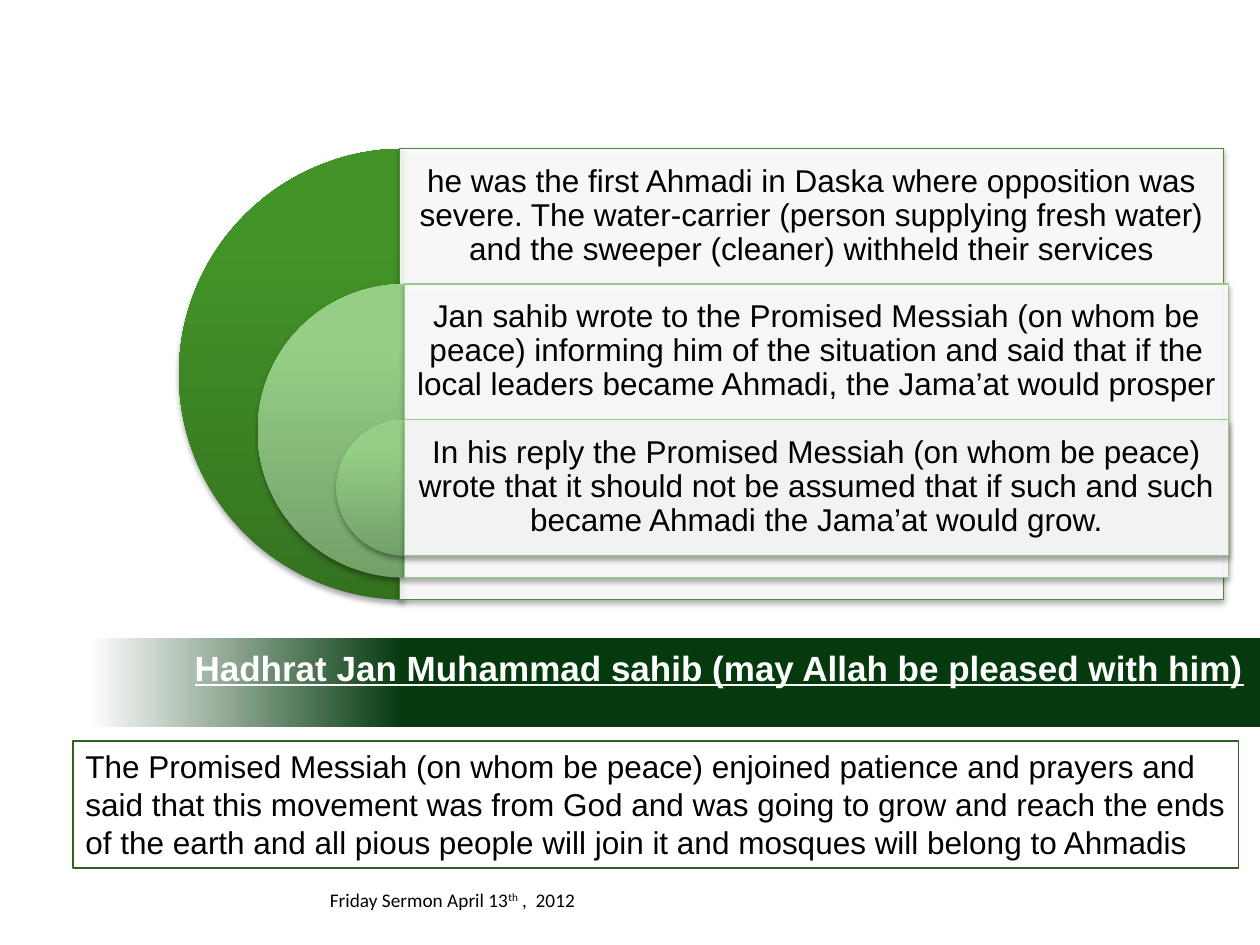
from lxml import etree
from pptx import Presentation
from pptx.dml.color import RGBColor
from pptx.enum.shapes import MSO_SHAPE
from pptx.enum.text import MSO_ANCHOR, PP_ALIGN
from pptx.oxml.ns import qn
from pptx.util import Inches, Pt

RECT, PIE = MSO_SHAPE.RECTANGLE, MSO_SHAPE.PIE
LEFT, CENTER, RIGHT = PP_ALIGN.LEFT, PP_ALIGN.CENTER, PP_ALIGN.RIGHT
TOP, MIDDLE = MSO_ANCHOR.TOP, MSO_ANCHOR.MIDDLE

BLACK = RGBColor(0x00, 0x00, 0x00)
WHITE = RGBColor(0xFF, 0xFF, 0xFF)
GRAY = RGBColor(0xF2, 0xF2, 0xF2)
FOREST = RGBColor(0x04, 0x3A, 0x0D)
MOSS = RGBColor(0x4B, 0x8C, 0x36)
MINT = RGBColor(0x96, 0xCA, 0x8A)
BORDER = RGBColor(0x32, 0x60, 0x23)

DEEP = [(0, RGBColor(0x34, 0x72, 0x1F)), (80, RGBColor(0x43, 0x94, 0x28)),
        (100, RGBColor(0x42, 0x97, 0x26))]
LIGHT = [(0, RGBColor(0x73, 0xA0, 0x68)), (80, RGBColor(0x95, 0xCF, 0x87)),
         (100, RGBColor(0x95, 0xD2, 0x86))]
BAND = [(7, WHITE), (32, FOREST)]

TITLE = "Hadhrat Jan Muhammad sahib (may Allah be pleased with him)"
LAYERS = [
    ("he was the first Ahmadi in Daska where opposition was severe. The water-carrier "
     "(person supplying fresh water) and the sweeper (cleaner) withheld their services",
     3.17, DEEP, WHITE, 90, MOSS),
    ("Jan sahib wrote to the Promised Messiah (on whom be peace) informing him of the "
     "situation and said that if the local leaders became Ahmadi, the Jama’at would prosper",
     3.21, LIGHT, WHITE, 90, MINT),
    ("In his reply the Promised Messiah (on whom be peace) wrote that it should not be "
     "assumed that if such and such became Ahmadi the Jama’at would grow.",
     3.21, LIGHT, GRAY, 100, MINT),
]
CLOSING = ("The Promised Messiah (on whom be peace) enjoined patience and prayers and said "
           "that this movement was from God and was going to grow and reach the ends of the "
           "earth and all pious people will join it and mosques will belong to Ahmadis")
FOOTER = [("Friday Sermon April 13", False), ("th", True), (" ,  2012", False)]

PIE_LEFT, PIE_TOP, PIE_SIZE = 1.42, 1.18, 3.58
ROW_H, SHRINK, PANEL_W = 1.07, 1.25, 6.54


def add_sub(parent, tag, **attrs):
    return etree.SubElement(parent, qn(tag), {k: str(v) for k, v in attrs.items()})


def set_gradient(sp, stops, angle):
    sp.fill.background()
    spPr = sp._element.spPr
    grad = etree.Element(qn("a:gradFill"), rotWithShape="1")
    gsLst = add_sub(grad, "a:gsLst")
    for pos, color in stops:
        add_sub(add_sub(gsLst, "a:gs", pos=pos * 1000), "a:srgbClr", val=color)
    add_sub(grad, "a:lin", ang=angle * 60000, scaled=0)
    spPr.replace(spPr.find(qn("a:noFill")), grad)


def add_shadow(sp):
    effects = sp._element.spPr.find(qn("a:effectLst"))
    shadow = add_sub(effects, "a:outerShdw", blurRad=Pt(3.1), dist=Pt(1.8),
                     dir=5400000, rotWithShape=0)
    add_sub(add_sub(shadow, "a:srgbClr", val=BLACK), "a:alpha", val=35000)


def add_shape(kind, box, stops=None, angle=0, fill=None, alpha=100, line=None, shadow=False):
    sp = slide.shapes.add_shape(kind, *map(Inches, box))
    sp.shadow.inherit = False
    if stops:
        set_gradient(sp, stops, angle)
    elif fill is not None:
        sp.fill.solid()
        sp.fill.fore_color.rgb = fill
        if alpha < 100:
            color = sp._element.spPr.find(qn("a:solidFill"))[0]
            add_sub(color, "a:alpha", val=alpha * 1000)
    else:
        sp.fill.background()
    if line is None:
        sp.line.fill.background()
    else:
        sp.line.color.rgb = line
        sp.line.width = Pt(0.75)
    if shadow:
        add_shadow(sp)
    return sp


def set_text(sp, runs, size=18, font="Arial", color=BLACK, bold=False, underline=False,
             align=LEFT, anchor=TOP, margins=(0.1, 0.05), spacing=None):
    tf = sp.text_frame
    tf.word_wrap = True
    tf.vertical_anchor = anchor
    tf.margin_left = tf.margin_right = Inches(margins[0])
    tf.margin_top = tf.margin_bottom = Inches(margins[1])
    p = tf.paragraphs[0]
    p.alignment = align
    if spacing:
        p.line_spacing = spacing
    for text, raised in runs:
        r = p.add_run()
        r.text = text
        r.font.size, r.font.name = Pt(size), font
        r.font.bold, r.font.underline = bold, underline
        r.font.color.rgb = color
        if raised:
            r.font._element.set("baseline", "30000")


def add_text(box, runs, **fmt):
    set_text(slide.shapes.add_textbox(*map(Inches, box)), runs, **fmt)


prs = Presentation()
prs.slide_width, prs.slide_height = Inches(10), Inches(7.5)
slide = prs.slides.add_slide(prs.slide_layouts[6])

add_shape(RECT, (0, 5.06, 10, 0.71), stops=BAND)
add_text((1, 5.08, 8.87, 0.62), [(TITLE, False)], size=20, color=WHITE, bold=True,
         underline=True, align=RIGHT, margins=(0, 0.05))

for i, (text, left, stops, fill, alpha, line) in enumerate(LAYERS):
    top = PIE_TOP + i * (ROW_H + 0.005)
    size = PIE_SIZE - i * SHRINK
    pie = add_shape(PIE, (PIE_LEFT + i * SHRINK / 2, top, size, size),
                    stops=stops, angle=270, shadow=True)
    pie.adjustments[0], pie.adjustments[1] = 54, 162
    add_shape(RECT, (left, top, PANEL_W, size), fill=fill, alpha=alpha, line=line, shadow=True)
    add_text((left, top, PANEL_W, ROW_H), [(text, False)], align=CENTER, anchor=MIDDLE,
             margins=(0.07, 0.07), spacing=0.9)

closing = add_shape(RECT, (0.58, 5.88, 9.25, 1.01), line=BORDER)
set_text(closing, [(CLOSING, False)])
add_text((2.52, 7, 3.57, 0.29), FOOTER, size=11, font="Calibri")

prs.save("out.pptx")
